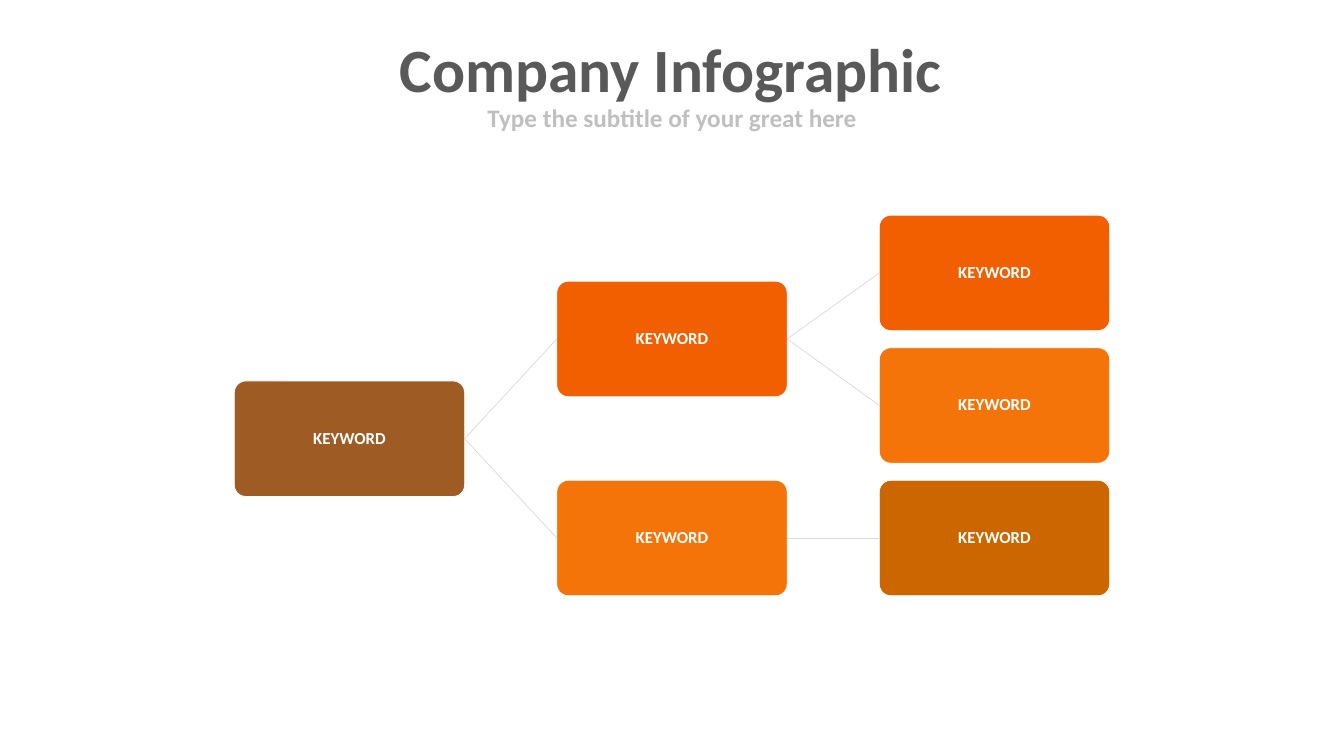
"""Build a company infographic slide with a keyword tree."""
from dataclasses import dataclass, field

from lxml import etree
from pptx import Presentation, util as u
from pptx.dml.color import RGBColor
from pptx.enum import shapes, text
from pptx.oxml.ns import qn

PX = 9144
COLORS = {
    "white": "FFFFFF", "title": "595959", "subtitle": "BFBFBF", "link": "D9D9D9",
    "brown": "9E5B24", "deep": "F15F00", "orange": "F5740A", "ochre": "CC6600",
}
BOX_W, BOX_H = 457, 229
LEFT, TOP, COL_STEP, ROW_STEP = 465, 427, 640, 263
NODES = {
    "root": (0, 1.25, "brown"),
    "upper": (1, 0.5, "deep"),
    "lower": (1, 2, "orange"),
    "leaf 1": (2, 0, "deep"),
    "leaf 2": (2, 1, "orange"),
    "leaf 3": (2, 2, "ochre"),
}
LINKS = [("root", "upper"), ("root", "lower"), ("upper", "leaf 1"),
         ("upper", "leaf 2"), ("lower", "leaf 3")]


@dataclass
class Deck:
    s: object
    font: str = "Calibri"
    colors: dict = field(default_factory=lambda: COLORS)

    def rgb(self, name):
        return RGBColor.from_string(self.colors[name])

    def label(self, sp, words, size, color, anchor, before=0):
        tf = sp.text_frame
        tf.word_wrap = True
        tf.auto_size = text.MSO_AUTO_SIZE.NONE
        tf.vertical_anchor = anchor
        p = tf.paragraphs[0]
        p.text = words
        p.alignment = text.PP_ALIGN.CENTER
        p.line_spacing = 0.9
        p.space_before = u.Pt(before)
        p.font.name, p.font.size, p.font.bold = self.font, u.Pt(size), True
        p.font.color.rgb = self.rgb(color)

    def title(self, words, x, y, w, h):
        sp = self.s.shapes.title
        sp.left, sp.top, sp.width, sp.height = (v * PX for v in (x, y, w, h))
        self.label(sp, words, 87.9, "title", text.MSO_ANCHOR.TOP)

    def subtitle(self, words, x, y, w, h):
        sp = self.s.shapes.add_textbox(*(v * PX for v in (x, y, w, h)))
        self.label(sp, words, 36, "subtitle", text.MSO_ANCHOR.TOP, before=10)

    def box(self, words, x, y, w, h, fill):
        sp = self.s.shapes.add_shape(shapes.MSO_SHAPE.ROUNDED_RECTANGLE,
                                     *(v * PX for v in (x, y, w, h)))
        sp.adjustments[0] = 0.1
        sp.shadow.inherit = False
        sp.fill.solid()
        sp.fill.fore_color.rgb = self.rgb(fill)
        sp.line.color.rgb = self.rgb("white")
        sp.line.width = u.Pt(1)
        self.label(sp, words, 24, "white", text.MSO_ANCHOR.MIDDLE)
        return sp

    def link(self, parent, child):
        line = self.s.shapes.add_connector(shapes.MSO_CONNECTOR.STRAIGHT, 0, 0, 0, 0)
        line.begin_connect(parent, 3)
        line.end_connect(child, 1)
        line.line.color.rgb = self.rgb("link")
        line.line.width = u.Pt(1)
        etree.SubElement(line._element.spPr, qn("a:effectLst"))


def main():
    prs = Presentation()
    prs.slide_width, prs.slide_height = 2667 * PX, 1500 * PX
    deck = Deck(prs.slides.add_slide(prs.slide_layouts[5]))
    deck.title("Company Infographic", 113, 73, 2437, 144)
    deck.subtitle("Type the subtitle of your great here", 115, 205, 2437, 107)
    boxes = {
        name: deck.box("KEYWORD", LEFT + col * COL_STEP, round(TOP + row * ROW_STEP),
                       BOX_W, BOX_H, fill)
        for name, (col, row, fill) in NODES.items()
    }
    for parent, child in LINKS:
        deck.link(boxes[parent], boxes[child])
    prs.save("out.pptx")


if __name__ == "__main__":
    main()
